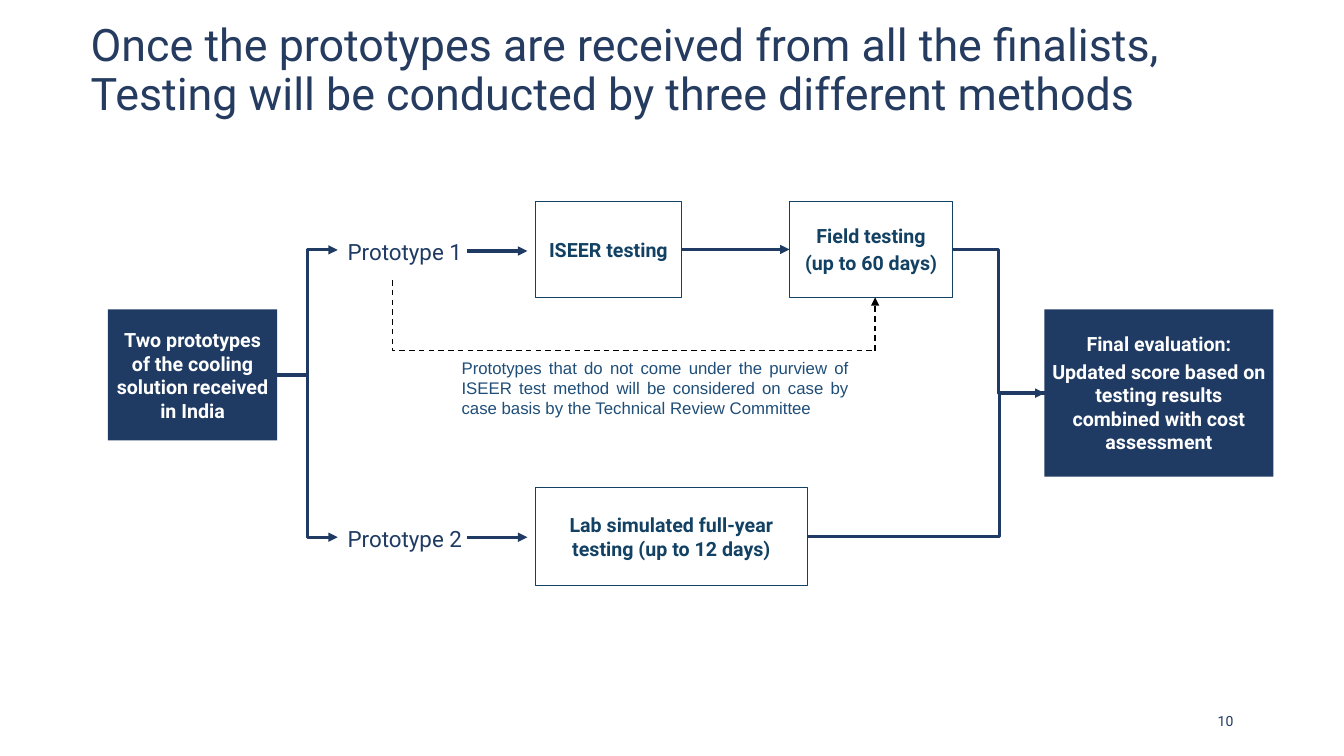
import pptx
import pptx.util
import pptx.dml.color
import pptx.enum.dml
import pptx.enum.shapes
import pptx.enum.text
import pptx.oxml.ns
from lxml import etree

PX = 9144  # EMU per px, 100 px to the inch
COLORS = {
    "title": "253C60",
    "navy": "1F3B63",
    "teal": "124163",
    "note": "1F4E79",
    "white": "FFFFFF",
    "black": "000000",
}
RGB = pptx.dml.color.RGBColor.from_string
ALIGN = pptx.enum.text.PP_ALIGN
ANCHOR = pptx.enum.text.MSO_ANCHOR
STRAIGHT = pptx.enum.shapes.MSO_CONNECTOR.STRAIGHT
ELBOW = pptx.enum.shapes.MSO_CONNECTOR.ELBOW
TOP, LEFT, BOTTOM, RIGHT = range(4)


def write_text(shape, lines, size, color, align, anchor, side_inset=10, font="Roboto", bold=False):
    """Fill a shape with one paragraph per line; later lines get a small space before."""
    frame = shape.text_frame
    frame.word_wrap = True
    frame.vertical_anchor = anchor
    frame.margin_left = frame.margin_right = side_inset * PX
    frame.margin_top = frame.margin_bottom = 5 * PX
    for index, line in enumerate(lines):
        paragraph = frame.add_paragraph() if index else frame.paragraphs[0]
        paragraph.alignment = align
        if index:
            paragraph.space_before = pptx.util.Pt(2.7)
        run = paragraph.add_run()
        run.text = line
        run.font.name = font
        run.font.size = pptx.util.Pt(size)
        run.font.bold = bold
        run.font.color.rgb = RGB(COLORS[color])


def draw_connector(kind, start, end, arrow=True, bend=None, dashed=False):
    """Link two ends, each an (x, y) point in px or a (box, side) pair."""
    connector = slide.shapes.add_connector(kind, 0, 0, 0, 0)
    if isinstance(start[0], int):
        connector.begin_x, connector.begin_y = start[0] * PX, start[1] * PX
    else:
        connector.begin_connect(*start)
    if isinstance(end[0], int):
        connector.end_x, connector.end_y = end[0] * PX, end[1] * PX
    else:
        connector.end_connect(*end)
    connector.line.color.rgb = RGB(COLORS["black" if dashed else "navy"])
    connector.line.width = pptx.util.Pt(1 if dashed else 2.25)
    if dashed:
        connector.line.dash_style = pptx.enum.dml.MSO_LINE.DASH
    qn = pptx.oxml.ns.qn
    properties = connector._element.spPr
    if arrow:
        etree.SubElement(properties.find(qn("a:ln")), qn("a:tailEnd"), type="triangle")
    if bend is not None:
        adjustments = properties.find(qn("a:prstGeom")).find(qn("a:avLst"))
        etree.SubElement(adjustments, qn("a:gd"), name="adj1", fmla=f"val {bend}")
    etree.SubElement(properties, qn("a:effectLst"))


deck = pptx.Presentation()
deck.slide_width, deck.slide_height = 1333 * PX, 750 * PX
slide = deck.slides.add_slide(deck.slide_layouts[6])

title = slide.shapes.add_textbox(90 * PX, 34 * PX, 1150 * PX, 74 * PX)
write_text(
    title,
    ["Once the prototypes are received from all the finalists, "
     "Testing will be conducted by three different methods"],
    32, "title", ALIGN.LEFT, ANCHOR.MIDDLE,
)
title.text_frame.margin_left = 0
title.text_frame.paragraphs[0].line_spacing = 0.9

# Process steps: position, whether filled, lines of text
steps = {
    "received": ((107, 307, 168, 130), True,
                 ["Two prototypes of the cooling solution received in India"]),
    "iseer": ((531, 200, 145, 95), False, ["ISEER testing"]),
    "field": ((783, 200, 162, 95), False, ["Field testing", "(up to 60 days)"]),
    "lab": ((531, 484, 270, 97), False,
            ["Lab simulated full-year testing (up to 12 days)"]),
    "evaluation": ((1036, 307, 227, 166), True,
                   ["Final evaluation:",
                    "Updated score based on testing results combined with cost assessment"]),
}
boxes = {}
for step, (place, filled, lines) in steps.items():
    box = slide.shapes.add_shape(
        pptx.enum.shapes.MSO_SHAPE.RECTANGLE, *(length * PX for length in place))
    box.shadow.inherit = False
    if filled:
        box.fill.solid()
        box.fill.fore_color.rgb = RGB(COLORS["navy"])
        box.line.fill.background()
    else:
        box.fill.background()
        box.line.color.rgb = RGB(COLORS["teal"])
        box.line.width = pptx.util.Pt(0.75)
    write_text(box, lines, 14, "white" if filled else "teal",
               ALIGN.CENTER, ANCHOR.MIDDLE, side_inset=7, bold=True)
    boxes[step] = box

# Each prototype branches off the received box and leads to its first test
for label, label_top, branch_y, arrow_y in (
    ("Prototype 1", 231, 248, 249),
    ("Prototype 2", 516, 533, 533),
):
    prototype = slide.shapes.add_textbox(335 * PX, label_top * PX, 173 * PX, 34 * PX)
    write_text(prototype, [label], 16, "navy", ALIGN.LEFT, ANCHOR.TOP)
    draw_connector(ELBOW, (boxes["received"], RIGHT), (335, branch_y), bend=50000)
    draw_connector(STRAIGHT, (463, arrow_y), (523, arrow_y))

draw_connector(STRAIGHT, (boxes["iseer"], RIGHT), (boxes["field"], LEFT))
draw_connector(ELBOW, (boxes["field"], RIGHT), (boxes["evaluation"], LEFT), bend=50000)
draw_connector(ELBOW, (boxes["lab"], RIGHT), (boxes["evaluation"], LEFT),
               arrow=False, bend=81000)

# Dashed bypass of the ISEER test
draw_connector(ELBOW, (389, 278), (868, 348), arrow=False, bend=0, dashed=True)
draw_connector(STRAIGHT, (868, 348), (868, 295), dashed=True)
bypass_note = slide.shapes.add_textbox(448 * PX, 350 * PX, 404 * PX, 71 * PX)
write_text(
    bypass_note,
    ["Prototypes that do not come under the purview of ISEER test method will be "
     "considered on case by case basis by the Technical Review Committee"],
    12, "note", ALIGN.JUSTIFY, ANCHOR.TOP, font="Arial",
)

page_number = slide.shapes.add_textbox(1190 * PX, 695 * PX, 51 * PX, 40 * PX)
write_text(page_number, ["10"], 10, "navy", ALIGN.CENTER, ANCHOR.MIDDLE)

deck.save("out.pptx")
